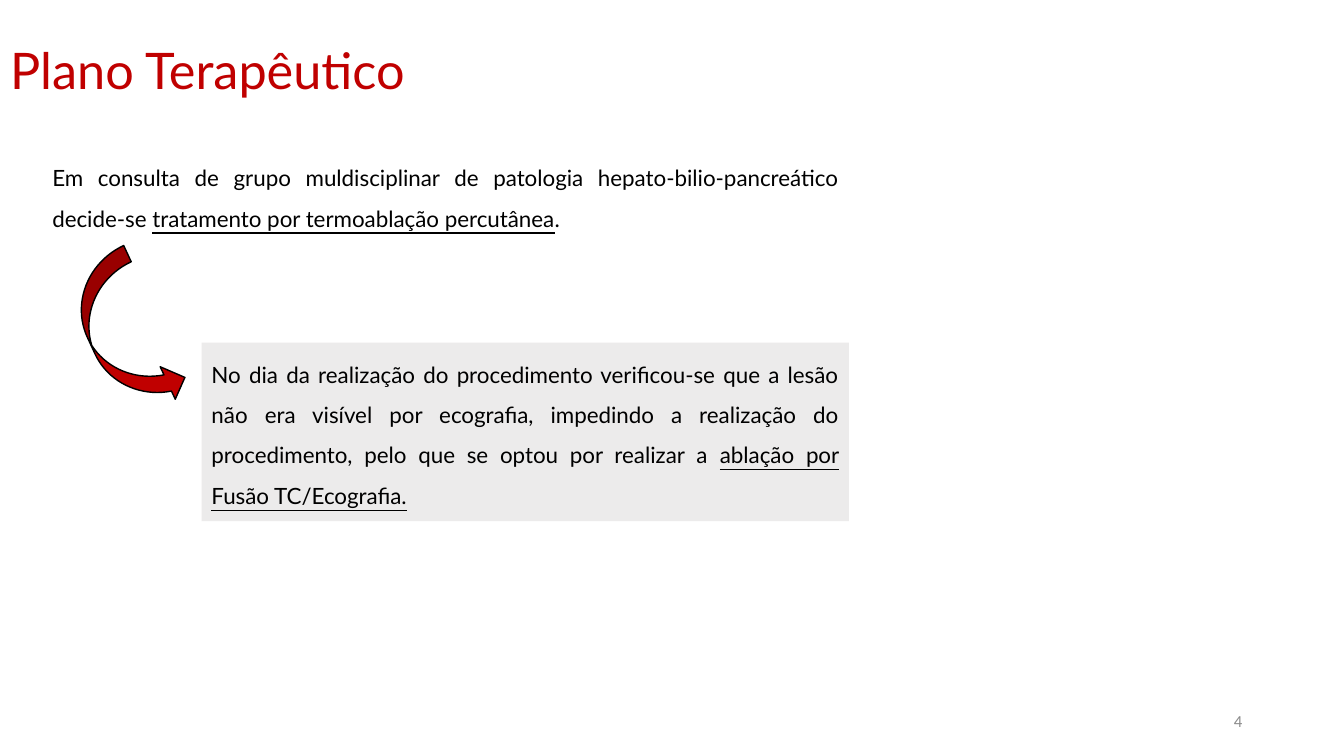
from lxml import etree
from pptx import Presentation
from pptx.dml.color import RGBColor
from pptx.enum.shapes import MSO_SHAPE
from pptx.enum.text import MSO_ANCHOR, PP_ALIGN
from pptx.oxml.ns import qn
from pptx.util import Inches, Pt

RED = RGBColor(0xC0, 0x00, 0x00)
BLACK = RGBColor(0x00, 0x00, 0x00)
GREY = RGBColor(0x8B, 0x8B, 0x8B)
PALE = RGBColor(0xD0, 0xCE, 0xCE)
RECT, CURVE = MSO_SHAPE.RECTANGLE, MSO_SHAPE.CURVED_RIGHT_ARROW
LEFT, RIGHT, JUST = PP_ALIGN.LEFT, PP_ALIGN.RIGHT, PP_ALIGN.JUSTIFY
TOP, MID = MSO_ANCHOR.TOP, MSO_ANCHOR.MIDDLE

WIDE, HIGH = Inches(13.33), Inches(7.5)
COL, ROW = WIDE / 100, HIGH / 100

HEAD = {"name": "Lato", "size": Pt(36), "color": RED}
BODY = {"name": "Lato", "size": Pt(16), "color": BLACK}
PAGE = {"name": "Calibri", "size": Pt(12), "color": GREY}


def grid(x, y, w, h):
    return [round(v) for v in (x * COL, y * ROW, w * COL, h * ROW)]


def style(font, form):
    for key, val in form.items():
        if key == "color":
            font.color.rgb = val
        else:
            setattr(font, key, val)


def write(shape, runs, form, align, space=1.0, anchor=TOP):
    frame = shape.text_frame
    frame.word_wrap = True
    frame.vertical_anchor = anchor
    para = frame.paragraphs[0]
    para.alignment = align
    para.line_spacing = space
    for text, line in runs:
        run = para.add_run()
        run.text = text
        style(run.font, {**form, "underline": line})


def add_title(slide, box, text):
    title = slide.shapes.title
    for key, val in zip(("left", "top", "width", "height"), box):
        setattr(title, key, val)
    write(title, [(text, False)], HEAD, LEFT, 0.9, MID)


def add_intro(slide, box, runs):
    write(slide.shapes.add_textbox(*box), runs, BODY, JUST, 1.5)


def add_note(slide, box, runs):
    note = slide.shapes.add_shape(RECT, *box)
    note.shadow.inherit = False
    note.line.fill.background()
    note.fill.solid()
    note.fill.fore_color.rgb = PALE
    tint = note.fill._xPr.find(".//" + qn("a:srgbClr"))
    etree.SubElement(tint, qn("a:alpha"), val="40000")
    write(note, runs, BODY, JUST, 1.5)


def add_arrow(slide, box):
    arrow = slide.shapes.add_shape(CURVE, *box)
    arrow.shadow.inherit = False
    arrow.rotation = 335.1
    arrow.fill.solid()
    arrow.fill.fore_color.rgb = RED
    arrow.line.color.rgb = BLACK
    arrow.line.width = Pt(1)


def add_page(slide, box, text):
    write(slide.shapes.add_textbox(*box), [(text, False)], PAGE, RIGHT, anchor=MID)


def main():
    deck = Presentation()
    deck.slide_width, deck.slide_height = WIDE, HIGH
    slide = deck.slides.add_slide(deck.slide_layouts[5])
    add_page(slide, grid(70.67, 92.67, 22.5, 5.33), "4")
    add_arrow(slide, grid(6.68, 33.47, 5.33, 21.6))
    add_note(slide, grid(15, 45.33, 48.16, 23.6), [
        ("No dia da realização do procedimento verificou-se que a lesão não era "
         "visível por ecografia, impedindo a realização do procedimento, pelo que "
         "se optou por realizar a ", False),
        ("ablação por Fusão TC/Ecografia.", True),
    ])
    add_title(slide, grid(0, 0, 86.27, 19.33), "Plano Terapêutico")
    add_intro(slide, grid(3.15, 19.33, 60, 11.73), [
        ("Em consulta de grupo muldisciplinar de patologia "
         "hepato-bilio-pancreático decide-se ", False),
        ("tratamento por termoablação percutânea", True),
        (".", False),
    ])
    deck.save("out.pptx")


if __name__ == "__main__":
    main()
